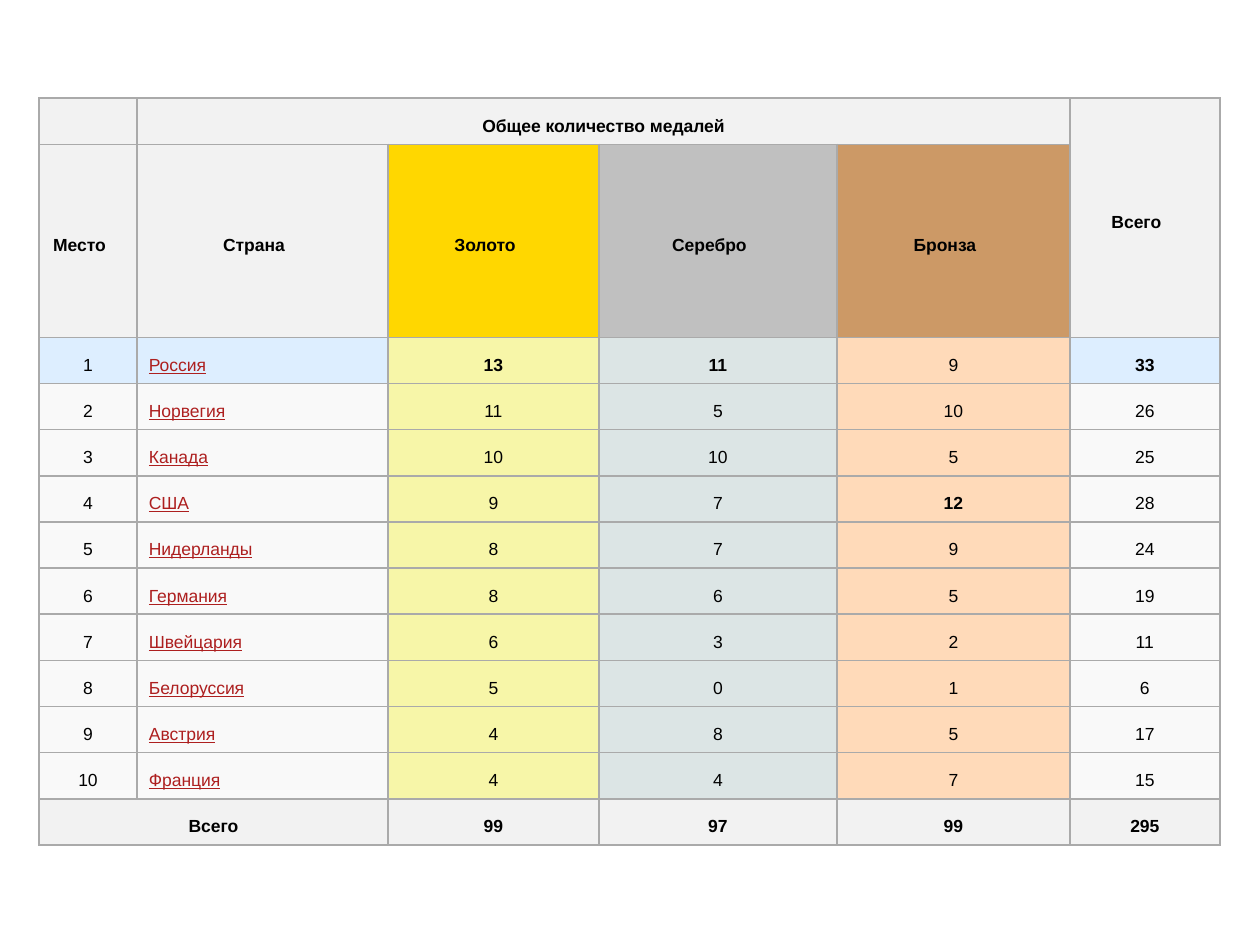
from lxml.etree import SubElement
from pptx import Presentation
from pptx.dml.color import RGBColor
from pptx.enum.text import MSO_ANCHOR, PP_ALIGN
from pptx.oxml.ns import qn
from pptx.util import Pt

TITLE = "Общее количество медалей"
TOTAL = "Всего"
HEADINGS = ["Место", "Страна", "Золото", "Серебро", "Бронза"]
MEDALS = [
    ("Россия", 13, 11, 9, 33),
    ("Норвегия", 11, 5, 10, 26),
    ("Канада", 10, 10, 5, 25),
    ("США", 9, 7, 12, 28),
    ("Нидерланды", 8, 7, 9, 24),
    ("Германия", 8, 6, 5, 19),
    ("Швейцария", 6, 3, 2, 11),
    ("Белоруссия", 5, 0, 1, 6),
    ("Австрия", 4, 8, 5, 17),
    ("Франция", 4, 4, 7, 15),
]
SUMS = [99, 97, 99, 295]
COLORS = {
    "head": "F2F2F2", "gold_head": "FFD700", "silver_head": "C0C0C0", "bronze_head": "CC9966",
    "gold": "F7F6A8", "silver": "DCE5E5", "bronze": "FFDAB9",
    "leader": "DDEEFF", "plain": "F9F9F9",
    "text": "000000", "country": "AD1F1F", "border": "AAAAAA",
}
HEADING_FILLS = ["head", "head", "gold_head", "silver_head", "bronze_head"]

PX = 914400 / 126
LEFT, TOP = 39, 98
COLUMN_WIDTHS = [98, 251, 211, 238, 233, 150]
TITLE_HEIGHT, HEADING_HEIGHT, BODY_HEIGHT = 46, 193, 508
SIDE_INSET, END_INSET, HEADING_INSET, COUNTRY_INSET = 8, 4, 25, 12


def emu(px):
    return round(px * PX)


def color(name):
    return RGBColor.from_string(COLORS[name])


def add_borders(cell):
    properties = cell._tc.get_or_add_tcPr()
    for side in ("lnL", "lnR", "lnT", "lnB"):
        line = SubElement(properties, qn(f"a:{side}"), w=str(Pt(1)))
        fill = SubElement(line, qn("a:solidFill"))
        SubElement(fill, qn("a:srgbClr"), val=COLORS["border"])


def format_cell(cell):
    add_borders(cell)
    cell.fill.solid()
    cell.fill.fore_color.rgb = color("head")
    cell.vertical_anchor = MSO_ANCHOR.MIDDLE
    cell.margin_left = cell.margin_right = emu(SIDE_INSET)
    cell.margin_top = cell.margin_bottom = emu(END_INSET)
    paragraph = cell.text_frame.paragraphs[0]
    paragraph.alignment = PP_ALIGN.CENTER
    paragraph.line_spacing = Pt(16.8)


def write(cell, text, fill="head", bold=True, text_color="text"):
    cell.fill.fore_color.rgb = color(fill)
    run = cell.text_frame.paragraphs[0].add_run()
    run.text = str(text)
    run.font.name = "Arial"
    run.font.size = Pt(10)
    run.font.bold = bold
    run.font.color.rgb = color(text_color)
    return run


def write_heading(cell, text, fill="head"):
    cell.margin_right = emu(HEADING_INSET)
    write(cell, text, fill)


def write_country(cell, name, fill):
    cell.margin_left = emu(COUNTRY_INSET)
    run = write(cell, name, fill, False, "country")
    run.font.underline = True
    cell.text_frame.paragraphs[0].alignment = PP_ALIGN.LEFT


def fill_table(table):
    write(table.cell(0, 1), TITLE)
    write_heading(table.cell(0, 5), TOTAL)
    for column, (text, fill) in enumerate(zip(HEADINGS, HEADING_FILLS)):
        write_heading(table.cell(1, column), text, fill)

    best = [max(values) for values in list(zip(*MEDALS))[1:]]
    for place, (country, *counts) in enumerate(MEDALS, 1):
        row = place + 1
        base = "leader" if place == 1 else "plain"
        write(table.cell(row, 0), place, base, False)
        write_country(table.cell(row, 1), country, base)
        fills = ["gold", "silver", "bronze", base]
        for column, (count, fill, top) in enumerate(zip(counts, fills, best), 2):
            write(table.cell(row, column), count, fill, count == top)

    last = len(MEDALS) + 2
    write(table.cell(last, 0), TOTAL)
    for column, value in enumerate(SUMS, 2):
        write(table.cell(last, column), value)

    table.cell(0, 1).merge(table.cell(0, 4))
    table.cell(0, 5).merge(table.cell(1, 5))
    table.cell(last, 0).merge(table.cell(last, 1))


def main():
    presentation = Presentation()
    presentation.slide_width, presentation.slide_height = emu(1260), emu(945)
    slide = presentation.slides.add_slide(presentation.slide_layouts[6])

    body_rows = len(MEDALS) + 1
    row_heights = [TITLE_HEIGHT, HEADING_HEIGHT] + [BODY_HEIGHT / body_rows] * body_rows
    frame = slide.shapes.add_table(
        len(row_heights), len(COLUMN_WIDTHS), emu(LEFT), emu(TOP),
        emu(sum(COLUMN_WIDTHS)), emu(sum(row_heights)))
    table = frame.table
    table.first_row = table.horz_banding = False
    for column, width in zip(table.columns, COLUMN_WIDTHS):
        column.width = emu(width)
    for row, height in zip(table.rows, row_heights):
        row.height = emu(height)
    for cell in table.iter_cells():
        format_cell(cell)
    fill_table(table)
    presentation.save("out.pptx")


if __name__ == "__main__":
    main()
